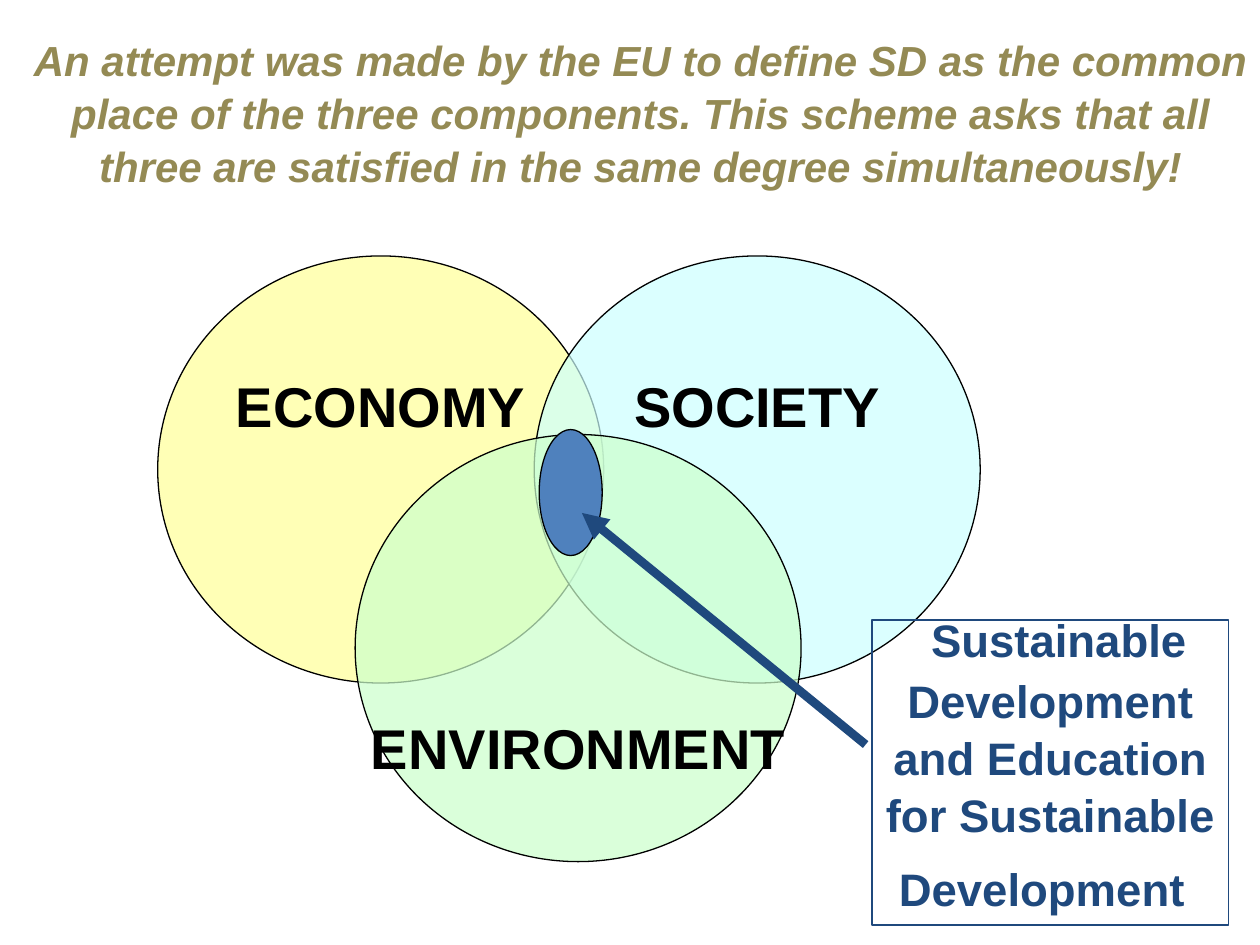
from lxml.etree import SubElement
from pptx import Presentation
from pptx.dml.color import RGBColor
from pptx.enum.shapes import MSO_CONNECTOR, MSO_SHAPE
from pptx.enum.text import MSO_ANCHOR, PP_ALIGN
from pptx.oxml.ns import qn
from pptx.util import Cm, Pt

BLACK = RGBColor(0x00, 0x00, 0x00)
YELLOW = RGBColor(0xFF, 0xFF, 0x99)
CYAN = RGBColor(0xCC, 0xFF, 0xFF)
GREEN = RGBColor(0xCC, 0xFF, 0xCC)
BLUE = RGBColor(0x4F, 0x81, 0xBD)
NAVY = RGBColor(0x1F, 0x49, 0x7D)
OLIVE = RGBColor(0x94, 0x8A, 0x54)


def add_outlined(kind, left, top, width, height, line_color, fill_color=None):
    shape = slide.shapes.add_shape(kind, Cm(left), Cm(top), Cm(width), Cm(height))
    shape.shadow.inherit = False
    shape.line.color.rgb = line_color
    shape.line.width = Pt(0.75)
    if fill_color is None:
        shape.fill.background()
    else:
        shape.fill.solid()
        shape.fill.fore_color.rgb = fill_color
    return shape


def style_paragraph(paragraph, size, color):
    paragraph.alignment = PP_ALIGN.CENTER
    paragraph.font.name = "Arial"
    paragraph.font.size = Pt(size)
    paragraph.font.bold = True
    paragraph.font.color.rgb = color


presentation = Presentation()
presentation.slide_width = Cm(25.4)
presentation.slide_height = Cm(19.05)
slide = presentation.slides.add_slide(presentation.slide_layouts[6])

circles = [
    ("ECONOMY", 3.18, 5.16, YELLOW, 71, 0, 2.6),
    ("SOCIETY", 10.77, 5.16, CYAN, 69, 0, 2.6),
    ("ENVIRONMENT", 7.16, 8.76, GREEN, 71, 4, 0),
]
for name, left, top, color, opacity, margin_top, margin_bottom in circles:
    circle = add_outlined(MSO_SHAPE.OVAL, left, top, 8.99, 8.61, BLACK, color)
    fill_color = circle.fill._xPr.find(qn("a:solidFill"))[0]
    SubElement(fill_color, qn("a:alpha")).set("val", str(opacity * 1000))
    frame = circle.text_frame
    frame.word_wrap = False
    frame.vertical_anchor = MSO_ANCHOR.MIDDLE
    frame.margin_top = Cm(margin_top)
    frame.margin_bottom = Cm(margin_bottom)
    frame.text = name
    style_paragraph(frame.paragraphs[0], 32, BLACK)

title = slide.shapes.add_textbox(Cm(0.43), Cm(0.64), Cm(24.97), Cm(3.33))
frame = title.text_frame
frame.word_wrap = True
frame.vertical_anchor = MSO_ANCHOR.BOTTOM
frame.margin_left = frame.margin_right = Cm(0.2)
frame.text = (
    "An attempt was made by the EU to define SD as the common place of the three "
    "components. This scheme asks that all three are satisfied in the same degree "
    "simultaneously!"
)
paragraph = frame.paragraphs[0]
style_paragraph(paragraph, 24, OLIVE)
paragraph.font.italic = True
paragraph.line_spacing = 1.05

add_outlined(MSO_SHAPE.OVAL, 10.87, 8.66, 1.27, 2.54, BLACK, BLUE)

label = add_outlined(MSO_SHAPE.RECTANGLE, 17.58, 12.5, 7.19, 6.15, NAVY)
frame = label.text_frame
frame.word_wrap = True
frame.vertical_anchor = MSO_ANCHOR.BOTTOM
paragraph = frame.paragraphs[0]
style_paragraph(paragraph, 26, NAVY)
paragraph.line_spacing = 1.05
label_runs = [
    (" ", 35),
    ("Sustainable Development", 26),
    ("and Education for Sustainable Development", 26),
    (" ", 35),
]
for index, (text, size) in enumerate(label_runs):
    if index == 2:
        paragraph.add_line_break()
    run = paragraph.add_run()
    run.text = text
    run.font.size = Pt(size)

arrow = slide.shapes.add_connector(
    MSO_CONNECTOR.STRAIGHT, Cm(17.45), Cm(15.01), Cm(11.73), Cm(10.34)
)
arrow.line.color.rgb = NAVY
arrow.line.width = Pt(5)
SubElement(arrow.line._get_or_add_ln(), qn("a:tailEnd")).set("type", "triangle")
SubElement(arrow._element.spPr, qn("a:effectLst"))

presentation.save("out.pptx")
